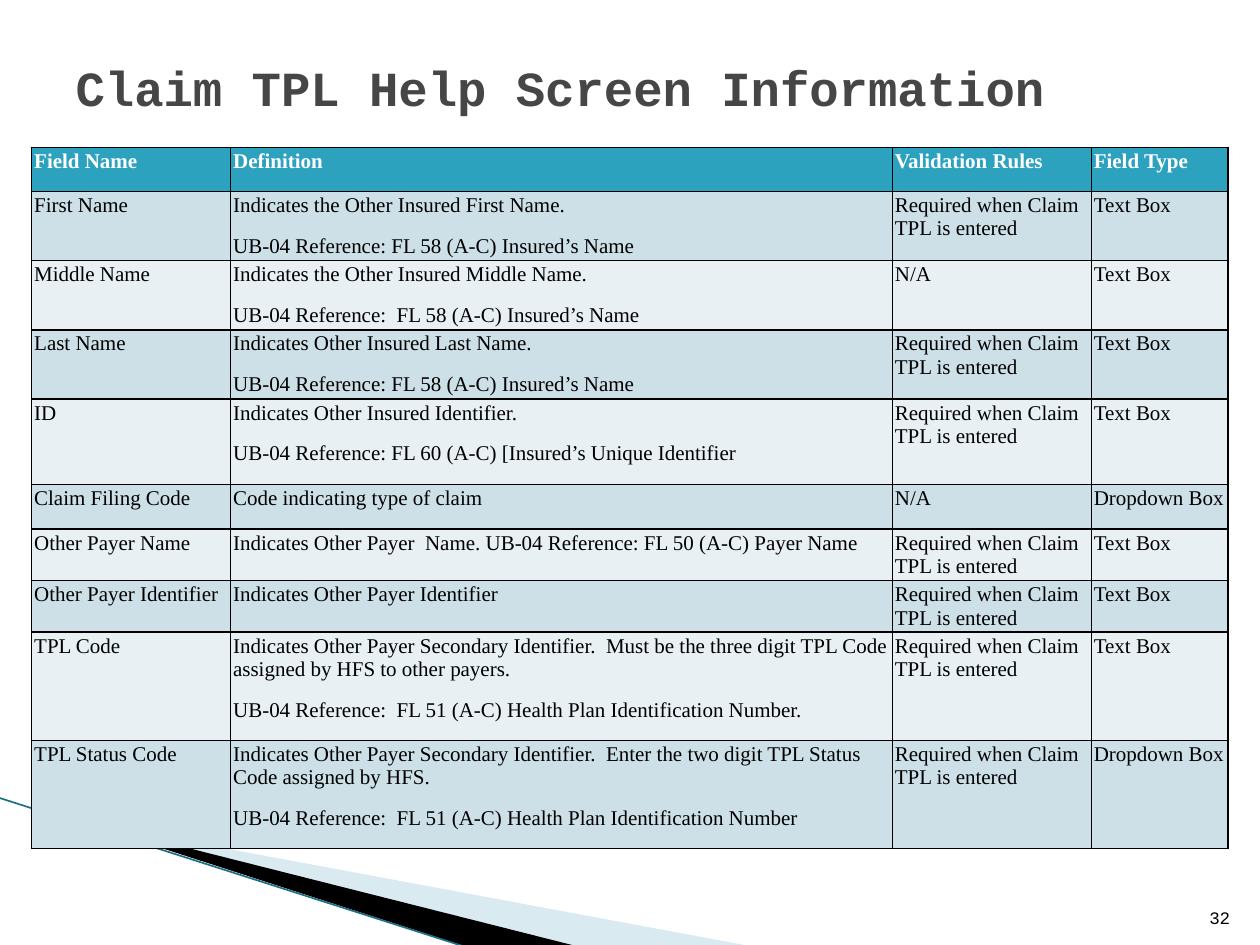
from lxml import etree
from pptx import Presentation
from pptx.dml.color import RGBColor
from pptx.enum.shapes import MSO_CONNECTOR
from pptx.enum.text import MSO_ANCHOR, MSO_AUTO_SIZE, PP_ALIGN
from pptx.oxml import parse_xml
from pptx.oxml.ns import nsdecls, qn
from pptx.util import Cm, Pt

LEFT, RIGHT = PP_ALIGN.LEFT, PP_ALIGN.RIGHT
MIDDLE, BOTTOM = MSO_ANCHOR.MIDDLE, MSO_ANCHOR.BOTTOM
STRAIGHT, FIXED = MSO_CONNECTOR.STRAIGHT, MSO_AUTO_SIZE.NONE


class Theme:
    mono, serif = "Courier New", "Times New Roman"
    title, body, small = 28, 12, 10
    black, white, grey = "000000", "FFFFFF", "464646"
    head, bands = "2DA2BF", ("CDE0E8", "E8F0F4")
    swoosh, edge = "A0CBDC", "1B7086"


def write(frame, text, font=Theme.serif, size=Theme.body, color=Theme.black,
          bold=False, align=LEFT, after=0):
    """Fill a text frame, one paragraph per line of text."""
    frame.text = text
    for para in frame.paragraphs:
        para.alignment = align
        para.space_after = Pt(after)
        for run in para.runs:
            run.font.name = font
            run.font.size = Pt(size)
            run.font.bold = bold
            run.font.color.rgb = RGBColor.from_string(color)


deck = Presentation()
deck.slide_width, deck.slide_height = Cm(25.4), Cm(19.05)
slide = deck.slides.add_slide(deck.slide_layouts[5])
shapes = slide.shapes

# Corner swoosh: a pale band, a black band and a thin edge line
bands = [
    ([(1.4, 16.52), (15.11, 19.07), (11.58, 19.07)], Theme.swoosh, 40),
    ([(1.35, 16.48), (11.61, 19.07), (9.45, 19.1)], Theme.black, 100),
]
for points, color, alpha in bands:
    start, *rest = [(Cm(x), Cm(y)) for x, y in points]
    pen = shapes.build_freeform(*start)
    pen.add_line_segments(rest)
    band = pen.convert_to_shape()
    band.shadow.inherit = False
    band.line.fill.background()
    band.fill.solid()
    band.fill.fore_color.rgb = RGBColor.from_string(color)
    if alpha < 100:
        tint = band.fill._xPr.find(".//" + qn("a:srgbClr"))
        etree.SubElement(tint, qn("a:alpha"), val=str(alpha * 1000))

edge = shapes.add_connector(STRAIGHT, Cm(-0.03), Cm(16.08), Cm(9.42), Cm(19.1))
edge.line.color.rgb = RGBColor.from_string(Theme.edge)
edge.line.width = Pt(0.95)
etree.SubElement(edge._element.spPr, qn("a:effectLst"))

# Title
title = shapes.title
title.left, title.top, title.width, title.height = Cm(1.27), Cm(0.76), Cm(22.86), Cm(1.98)
title.text_frame.auto_size = FIXED
title.text_frame.vertical_anchor = MIDDLE
write(title.text_frame, "Claim TPL Help Screen Information", font=Theme.mono,
      size=Theme.title, color=Theme.grey, bold=True)

# Field table: row height, then the four cells
need = "Required when Claim TPL is entered"
box, drop = "Text Box", "Dropdown Box"
rows = [
    (0.89, "Field Name", "Definition", "Validation Rules", "Field Type"),
    (1.3, "First Name", "Indicates the Other Insured First Name.\n"
     "UB-04 Reference: FL 58 (A-C) Insured’s Name", need, box),
    (1.3, "Middle Name", "Indicates the Other Insured Middle Name.\n"
     "UB-04 Reference:  FL 58 (A-C) Insured’s Name", "N/A", box),
    (1.3, "Last Name", "Indicates Other Insured Last Name.\n"
     "UB-04 Reference: FL 58 (A-C) Insured’s Name", need, box),
    (1.73, "ID", "Indicates Other Insured Identifier.\n"
     "UB-04 Reference: FL 60 (A-C) [Insured’s Unique Identifier", need, box),
    (0.89, "Claim Filing Code", "Code indicating type of claim", "N/A", drop),
    (0.99, "Other Payer Name",
     "Indicates Other Payer  Name. UB-04 Reference: FL 50 (A-C) Payer Name", need, box),
    (0.99, "Other Payer Identifier", "Indicates Other Payer Identifier", need, box),
    (2.18, "TPL Code", "Indicates Other Payer Secondary Identifier.  "
     "Must be the three digit TPL Code assigned by HFS to other payers.\n"
     "UB-04 Reference:  FL 51 (A-C) Health Plan Identification Number.", need, box),
    (2.18, "TPL Status Code", "Indicates Other Payer Secondary Identifier.  "
     "Enter the two digit TPL Status Code assigned by HFS.\n"
     "UB-04 Reference:  FL 51 (A-C) Health Plan Identification Number", need, drop),
]
widths = [4.01, 13.34, 4.01, 2.75]
high = sum(row[0] for row in rows)
table = shapes.add_table(len(rows), len(widths), Cm(0.64), Cm(2.97),
                         Cm(sum(widths)), Cm(high)).table
for col, width in zip(table.columns, widths):
    col.width = Cm(width)

for r, (height, *texts) in enumerate(rows):
    table.rows[r].height = Cm(height)
    top = r == 0
    for c, text in enumerate(texts):
        cell = table.cell(r, c)
        cell.margin_left = cell.margin_right = Cm(0.05)
        cell.margin_top = cell.margin_bottom = Cm(0.05)
        for side in ("lnL", "lnR", "lnT", "lnB"):
            cell._tc.get_or_add_tcPr().append(parse_xml(
                f'<a:{side} {nsdecls("a")} w="{Pt(1)}"><a:solidFill>'
                f'<a:srgbClr val="{Theme.black}"/></a:solidFill></a:{side}>'))
        cell.fill.solid()
        fill = Theme.head if top else Theme.bands[(r - 1) % 2]
        cell.fill.fore_color.rgb = RGBColor.from_string(fill)
        write(cell.text_frame, text, bold=top, after=10,
              color=Theme.white if top else Theme.black)

# Page number
page = shapes.add_textbox(Cm(24.03), Cm(17.81), Cm(1.02), Cm(1.02)).text_frame
page.word_wrap = True
page.vertical_anchor = BOTTOM
write(page, "32", font=Theme.mono, size=Theme.small, align=RIGHT)

deck.save("out.pptx")
